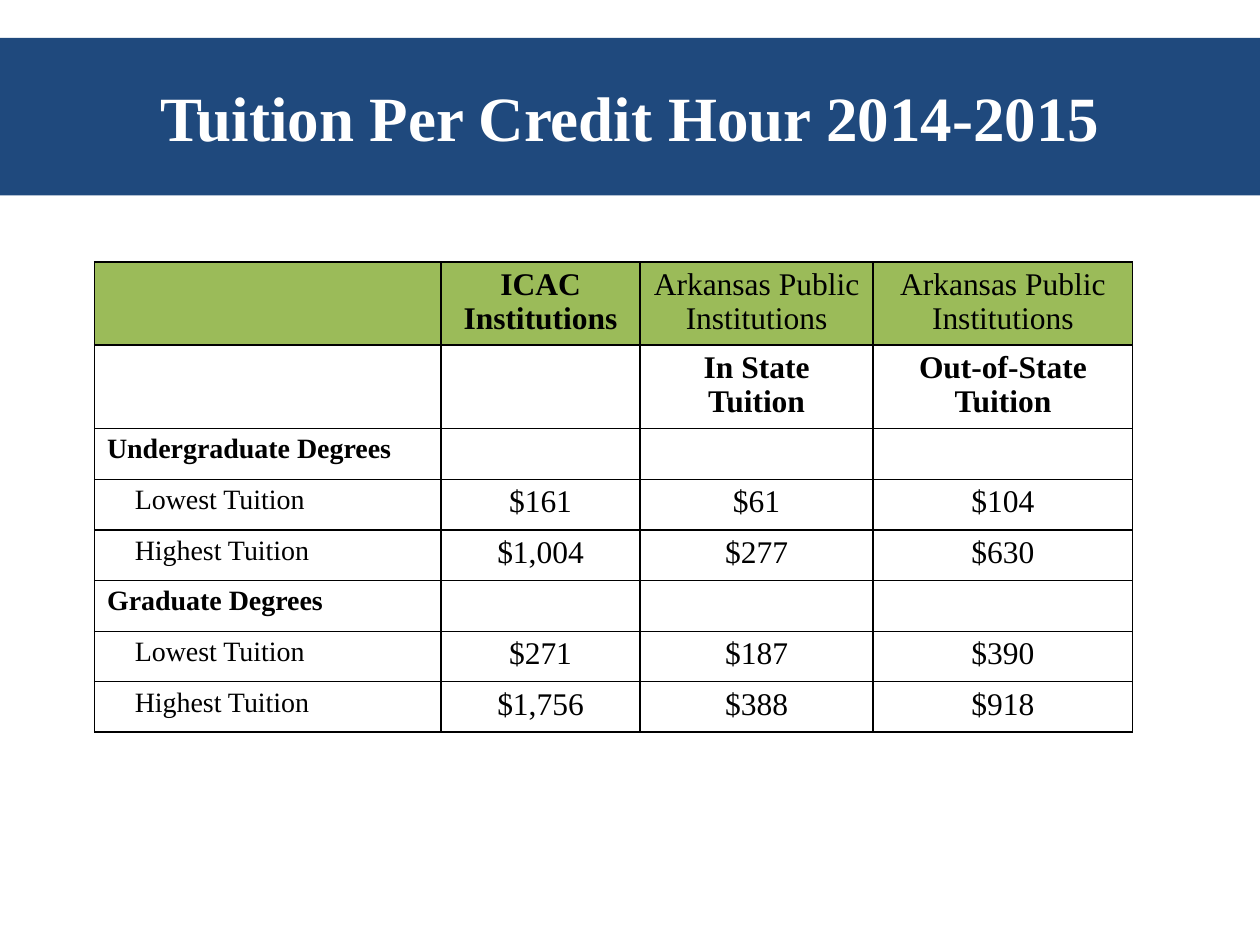
from lxml.etree import SubElement
from pptx import Presentation
from pptx.dml.color import RGBColor
from pptx.enum.text import MSO_ANCHOR as ANCHOR, PP_ALIGN as ALIGN
from pptx.oxml.ns import qn
from pptx.util import Inches, Pt

FONT = "Times New Roman"
COLORS = {"band": "1F497D", "header": "9BBB59", "body": "FFFFFF",
          "text": "000000", "title": "FFFFFF"}
COL_WIDTHS = [2.75, 1.58, 1.85, 2.06]
ROW_HEIGHTS = [0.66] * 2 + [0.4] * 6
ROWS = [
    ["", "ICAC Institutions", "Arkansas Public Institutions",
     "Arkansas Public Institutions"],
    ["", "", "In State Tuition", "Out-of-State Tuition"],
    ["Undergraduate Degrees", "", "", ""],
    ["Lowest Tuition", "$161", "$61", "$104"],
    ["Highest Tuition", "$1,004", "$277", "$630"],
    ["Graduate Degrees", "", "", ""],
    ["Lowest Tuition", "$271", "$187", "$390"],
    ["Highest Tuition", "$1,756", "$388", "$918"],
]
BOLD = {"ICAC Institutions", "In State Tuition", "Out-of-State Tuition",
        "Undergraduate Degrees", "Graduate Degrees"}


def rgb(name):
    return RGBColor.from_string(COLORS[name])


def style_font(font, size, color, bold):
    font.name = FONT
    font.size = Pt(size)
    font.bold = bold
    font.color.rgb = rgb(color)


def add_title(s, text):
    sp = s.shapes.title
    sp.left, sp.top = Inches(0), Inches(0.3)
    sp.width, sp.height = Inches(10), Inches(1.25)
    sp.fill.solid()
    sp.fill.fore_color.rgb = rgb("band")
    tf = sp.text_frame
    tf.vertical_anchor = ANCHOR.MIDDLE
    p = tf.paragraphs[0]
    p.alignment = ALIGN.CENTER
    r = p.add_run()
    r.text = text
    style_font(r.font, 36, "title", True)


def set_borders(cell):
    tc_pr = cell._tc.get_or_add_tcPr()
    for side in ("lnL", "lnR", "lnT", "lnB"):
        ln = SubElement(tc_pr, qn(f"a:{side}"), w=str(Pt(1)))
        fill = SubElement(ln, qn("a:solidFill"))
        SubElement(fill, qn("a:srgbClr"), val=COLORS["text"])


def fill_cell(cell, text, is_header, is_label):
    set_borders(cell)
    cell.fill.solid()
    cell.fill.fore_color.rgb = rgb("header" if is_header else "body")
    if not text:
        return
    bold = text in BOLD
    if is_label and not bold:
        cell.margin_left = Inches(0.32)
    p = cell.text_frame.paragraphs[0]
    p.alignment = ALIGN.LEFT if is_label else ALIGN.CENTER
    p.line_spacing = 0.97
    r = p.add_run()
    r.text = text
    style_font(r.font, 16 if is_label else 18, "text", bold)


def add_tuition_table(s):
    table = s.shapes.add_table(
        len(ROWS), len(COL_WIDTHS), Inches(0.75), Inches(2.08),
        Inches(sum(COL_WIDTHS)), Inches(sum(ROW_HEIGHTS))).table
    for col, width in zip(table.columns, COL_WIDTHS):
        col.width = Inches(width)
    for row, height in zip(table.rows, ROW_HEIGHTS):
        row.height = Inches(height)
    for i, values in enumerate(ROWS):
        for j, text in enumerate(values):
            fill_cell(table.cell(i, j), text, i == 0, j == 0)


def main():
    prs = Presentation()
    prs.slide_width, prs.slide_height = Inches(10), Inches(7.5)
    s = prs.slides.add_slide(prs.slide_layouts[5])
    add_title(s, "Tuition Per Credit Hour 2014-2015")
    add_tuition_table(s)
    prs.save("out.pptx")


if __name__ == "__main__":
    main()
